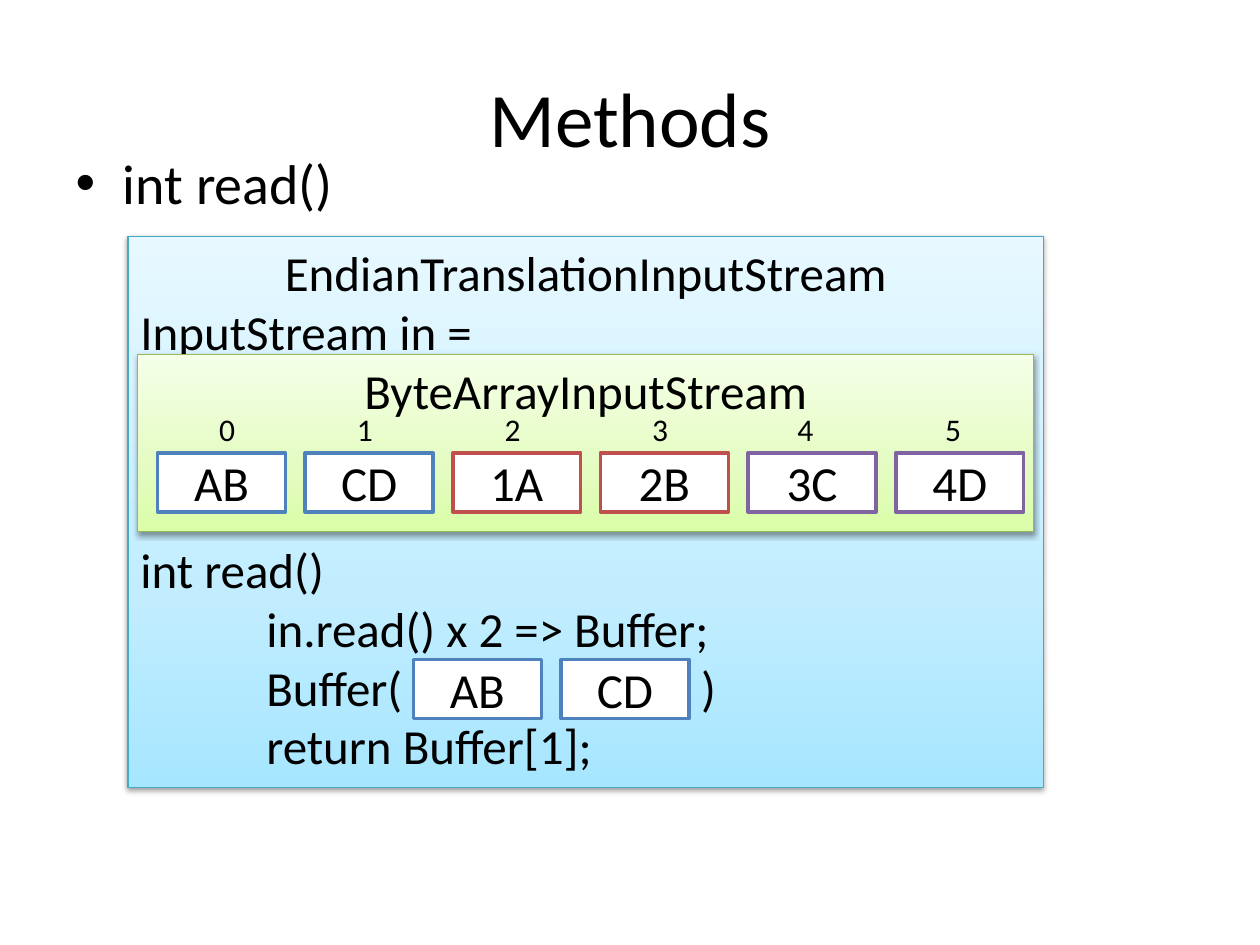
from typing import NamedTuple

from pptx import Presentation
from pptx.dml.color import RGBColor
from pptx.enum.shapes import MSO_SHAPE
from pptx.enum.text import MSO_ANCHOR, MSO_AUTO_SIZE, PP_ALIGN
from pptx.oxml.ns import qn
from pptx.oxml import parse_xml
from pptx.util import Inches, Pt

RECT = MSO_SHAPE.RECTANGLE
CENTER, LEFT = PP_ALIGN.CENTER, PP_ALIGN.LEFT
TOP, MIDDLE = MSO_ANCHOR.TOP, MSO_ANCHOR.MIDDLE
FONT = "Calibri"
UNIT = Inches(10 / 128)  # the slide is 128 by 96 grid units
CELL_W, CELL_H, CELL_STEP = 13, 6, 15
THREE_LINES = Pt(102.5)
NS = 'xmlns:a="http://schemas.openxmlformats.org/drawingml/2006/main"'
COLORS = {
    "text": "000000", "cell": "FFFFFF",
    "blue": "4F81BD", "red": "C0504D", "purple": "8064A2",
    "aqua": "46AAC5", "green": "98B955",
}
GRADIENTS = {
    "aqua": {0: "A7E6FF", 35: "C1EDFF", 100: "E7F8FF"},
    "green": {0: "DAFDA7", 35: "E4FCC2", 100: "F5FFE7"},
}


class Box(NamedTuple):
    """Left, top, width and height in grid units."""
    left: float
    top: float
    width: float
    height: float

    def emu(self):
        return [round(v * UNIT) for v in self]


class Byte(NamedTuple):
    value: str
    color: str
    label_left: float


STREAM_BYTES = [
    Byte("AB", "blue", 21), Byte("CD", "blue", 35),
    Byte("1A", "red", 50), Byte("2B", "red", 65),
    Byte("3C", "purple", 79.75), Byte("4D", "purple", 94.75),
]
CODE = ["InputStream in =", "int read()", "\tin.read() x 2 => Buffer;",
        "\tBuffer(\t)", "\treturn Buffer[1];"]


def rgb(name: str) -> RGBColor:
    return RGBColor.from_string(COLORS[name])


def style(p, size: float, align=None):
    p.font.name, p.font.size = FONT, Pt(size)
    p.font.color.rgb = rgb("text")
    if align is not None:
        p.alignment = align


def add_rect(slide, box: Box, text: str, line: str, width: float, anchor):
    sp = slide.shapes.add_shape(RECT, *box.emu())
    sp.shadow.inherit = False
    sp.line.color.rgb, sp.line.width = rgb(line), Pt(width)
    tf = sp.text_frame
    tf.vertical_anchor = anchor
    tf.text = text
    style(tf.paragraphs[0], 28, CENTER)
    return sp


def add_cell(slide, left: float, top: float, byte: Byte):
    box = Box(left, top, CELL_W, CELL_H)
    sp = add_rect(slide, box, byte.value, byte.color, 2, MIDDLE)
    sp.fill.solid()
    sp.fill.fore_color.rgb = rgb("cell")


def add_panel(slide, box: Box, title: str, color: str):
    """Add a titled panel with a vertical gradient and a soft shadow."""
    sp = add_rect(slide, box, title, color, 0.75, TOP)
    sp.fill.gradient()
    sp.fill.gradient_angle = 90
    props = sp.element.spPr
    stops = props.find(qn("a:gradFill")).find(qn("a:gsLst"))
    for stop in list(stops):
        stops.remove(stop)
    for pos, value in GRADIENTS[color].items():
        stops.append(parse_xml(
            f'<a:gs {NS} pos="{pos * 1000}"><a:srgbClr val="{value}"/></a:gs>'))
    props.find(qn("a:effectLst")).append(parse_xml(
        f'<a:outerShdw {NS} blurRad="40000" dist="20000" dir="5400000" rotWithShape="0">'
        '<a:srgbClr val="000000"><a:alpha val="38000"/></a:srgbClr></a:outerShdw>'))
    return sp


def add_code(tf, lines: list[str]):
    for line in lines:
        p = tf.add_paragraph()
        p.text = line
        style(p, 28, LEFT)
        if line == "int read()":
            p.space_before = THREE_LINES  # room for the inner stream
        tabs = "".join(f'<a:tab pos="{Inches(x)}" algn="l"/>' for x in (1, 4.45))
        p._p.get_or_add_pPr().insert_element_before(
            parse_xml(f"<a:tabLst {NS}>{tabs}</a:tabLst>"), "a:defRPr", "a:extLst")


def add_label(slide, left: float, text: str):
    tb = slide.shapes.add_textbox(*Box(left, 41, 4.2, 5.15).emu())
    tf = tb.text_frame
    tf.word_wrap, tf.auto_size = False, MSO_AUTO_SIZE.SHAPE_TO_FIT_TEXT
    tf.text = text
    style(tf.paragraphs[0], 18)


def fill_placeholder(sp, box: Box, text: str, size: float, align):
    sp.left, sp.top, sp.width, sp.height = box.emu()
    sp.text_frame.text = text
    style(sp.text_frame.paragraphs[0], size, align)


def main():
    prs = Presentation()
    prs.slide_width, prs.slide_height = Inches(10), Inches(7.5)
    slide = prs.slides.add_slide(prs.slide_layouts[1])
    title, body = slide.placeholders
    fill_placeholder(title, Box(6.4, 3.84, 115.2, 16), "Methods", 44, CENTER)
    fill_placeholder(body, Box(6.4, 14.4, 115.2, 63.36), "int read()", 32, LEFT)

    outer = add_panel(slide, Box(13, 24, 93, 56), "EndianTranslationInputStream", "aqua")
    add_code(outer.text_frame, CODE)
    add_panel(slide, Box(14, 36, 91, 18), "ByteArrayInputStream", "green")

    for i, byte in enumerate(STREAM_BYTES):
        add_label(slide, byte.label_left, str(i))
        add_cell(slide, 16 + i * CELL_STEP, 46, byte)
    for i, byte in enumerate(STREAM_BYTES[:2]):
        add_cell(slide, 42 + i * CELL_STEP, 67, byte)

    prs.save("out.pptx")


if __name__ == "__main__":
    main()
